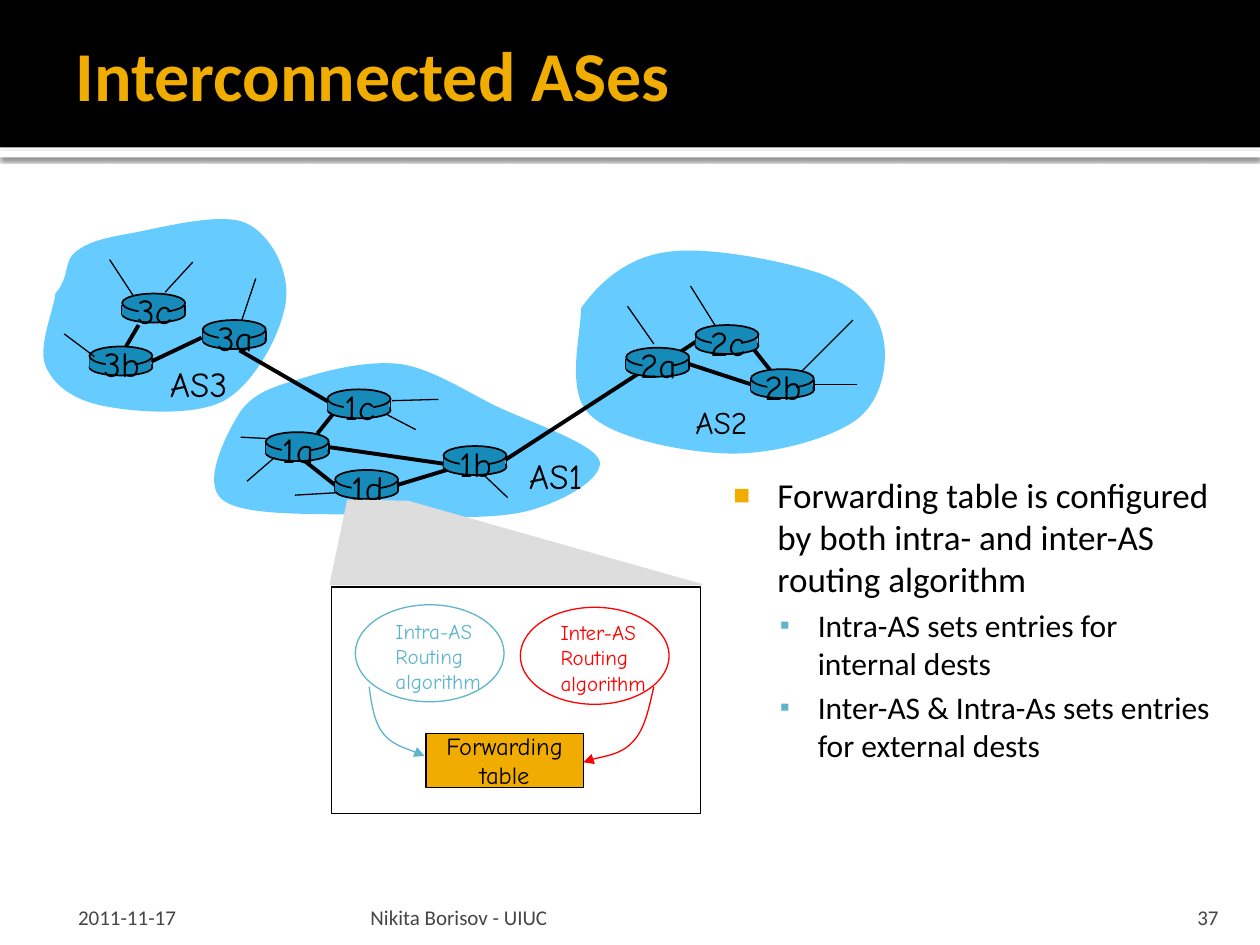
from lxml.etree import SubElement
from pptx import Presentation
from pptx.dml.color import RGBColor
from pptx.enum.shapes import MSO_CONNECTOR, MSO_SHAPE
from pptx.enum.text import MSO_ANCHOR, MSO_AUTO_SIZE, PP_ALIGN
from pptx.oxml.ns import qn
from pptx.util import Pt

PX = 9144  # 100 px to the inch
BLACK = RGBColor(0x00, 0x00, 0x00)
WHITE = RGBColor(0xFF, 0xFF, 0xFF)
GOLD = RGBColor(0xF0, 0xAD, 0x00)
TEAL = RGBColor(0x60, 0xB5, 0xCC)
RED = RGBColor(0xFF, 0x00, 0x00)
SKY = RGBColor(0x66, 0xCC, 0xFF)
ROUTER = RGBColor(0x16, 0x8B, 0xBA)
GRAY = RGBColor(0xDD, 0xDD, 0xDD)
FOOT = RGBColor(0x45, 0x45, 0x45)
SANS, COMIC = "Calibri", "Comic Neue"

TITLE = "Interconnected ASes"
BULLETS = [  # level, text
    (0, "Forwarding table is configured by both intra- and inter-AS routing algorithm"),
    (1, "Intra-AS sets entries for internal dests"),
    (1, "Inter-AS & Intra-As sets entries for external dests"),
]
LEVELS = [  # size, left margin, hang, space before, bullet, bullet colour, bullet %
    (20, 48, 35, 0, "■", GOLD, 80),
    (18, 80, 30, 3.6, "▪", TEAL, 90),
]
FOOTERS = [  # text, box, alignment, left and right inset
    ("2011-11-17", (50, 708, 233, 30), PP_ALIGN.LEFT, 12, 5),
    ("Nikita Borisov - UIUC", (289, 708, 602, 30), PP_ALIGN.LEFT, 5, 5),
    ("37", (897, 708, 80, 30), PP_ALIGN.RIGHT, 10, 10),
]
CLOUDS = [  # start point, then two control points and an end point per curve
    [(461, 245), (474, 226), (497, 204), (530, 200), (562, 195), (628, 208), (656, 219),
     (685, 231), (697, 249), (701, 268), (705, 287), (701, 317), (680, 333),
     (660, 348), (613, 361), (578, 360), (542, 359), (487, 348), (468, 329),
     (448, 310), (462, 262), (461, 245)],
    [(44, 233), (56, 219), (50, 208), (60, 200), (70, 192), (82, 189), (105, 185),
     (127, 181), (175, 168), (195, 177), (215, 186), (230, 215), (227, 239),
     (224, 263), (203, 304), (178, 318), (154, 331), (105, 327), (81, 322),
     (57, 317), (42, 305), (36, 290), (30, 275), (43, 245), (44, 233)],
    [(190, 328), (201, 311), (220, 306), (241, 300), (263, 293), (293, 286), (318, 289),
     (343, 293), (367, 309), (393, 322), (420, 335), (472, 352), (476, 366),
     (479, 380), (446, 399), (417, 406), (387, 413), (339, 410), (299, 409),
     (259, 407), (195, 411), (177, 397), (159, 384), (180, 344), (190, 328)],
]
AS_LABELS = [("AS3", (125, 283, 73, 43), 20), ("AS1", (410, 356, 73, 43), 20),
             ("AS2", (542, 315, 67, 40), 18)]
ROUTERS = {"3b": (71, 275), "1d": (266, 373), "3a": (161, 254), "1c": (260, 309),
           "2a": (497, 276), "1a": (211, 343), "2c": (552, 258), "2b": (596, 293),
           "1b": (352, 354), "3c": (97, 233)}
LINKS = [(547, 289, 596, 305), (598, 277, 613, 296), (536, 282, 554, 270),
         (315, 385, 358, 372), (242, 366, 266, 385), (262, 355, 352, 368),
         (252, 344, 264, 329), (120, 287, 160, 268), (190, 278, 261, 319),
         (401, 365, 506, 297), (110, 258, 100, 275)]
STUBS = [(51, 265, 75, 283), (153, 208, 131, 232), (87, 206, 106, 235),
         (203, 221, 192, 254), (645, 305, 680, 305), (636, 295, 677, 254),
         (568, 259, 548, 227), (519, 273, 498, 243), (218, 363, 196, 382),
         (211, 348, 191, 347), (268, 391, 234, 393), (311, 318, 348, 317),
         (384, 377, 403, 395), (307, 329, 330, 341)]
BEAM = [(262, 464), (276, 397), (324, 398), (557, 464), (262, 464)]
ALGORITHMS = [  # name, colour, ellipse corner, text corner, arrow curve
    ("Intra-AS", TEAL, (282, 480), (304, 486),
     [(293, 545), (295, 559), (297, 573), (304, 582), (311, 591), (331, 597), (337, 600)]),
    ("Inter-AS", RED, (413, 482), (435, 487),
     [(519, 545), (515, 562), (512, 579), (502, 589), (493, 599), (469, 602), (463, 605)]),
]


def px(values):
    return [v * PX for v in values]


def paint(sp, fill=None, line=None, width=0.75):
    sp.shadow.inherit = False
    if fill is None:
        sp.fill.background()
    else:
        sp.fill.solid()
        sp.fill.fore_color.rgb = fill
    if line is None:
        sp.line.fill.background()
    else:
        sp.line.color.rgb = line
        sp.line.width = Pt(width)
    return sp


def shape(shapes, kind, box, *style):
    return paint(shapes.add_shape(kind, *px(box)), *style)


def line(shapes, ends, width):
    c = shapes.add_connector(MSO_CONNECTOR.STRAIGHT, *px(ends))
    c.line.color.rgb = BLACK
    c.line.width = Pt(width)
    SubElement(c._element.spPr, qn("a:effectLst"))


def outline(shapes, points, closed, curved, *style):
    """Freeform through the points; curved takes them in threes as Bezier curves."""
    builder = shapes.build_freeform(*points[0], scale=PX)
    builder.add_line_segments(points[1:], close=closed)
    sp = builder.convert_to_shape()
    if curved:
        segments = sp._element.xpath(".//a:lnTo")
        for i in range(0, len(segments) - 2, 3):
            first = segments[i]
            curve = first.makeelement(qn("a:cubicBezTo"))
            first.addprevious(curve)
            for segment in segments[i:i + 3]:
                curve.append(segment[0])
                segment.getparent().remove(segment)
    return paint(sp, *style)


def write(tf, lines, size, color, font=COMIC, align=PP_ALIGN.LEFT, bold=False, **frame):
    for name, value in frame.items():
        setattr(tf, name, value)
    for i, text in enumerate(lines):
        p = tf.paragraphs[0] if i == 0 else tf.add_paragraph()
        p.alignment = align
        r = p.add_run()
        r.text = text
        r.font.color.rgb = color
        for name, value in {"size": Pt(size), "name": font, "bold": bold}.items():
            setattr(r.font, name, value)


def label(shapes, box, lines, size, color, **fmt):
    tf = shapes.add_textbox(*px(box)).text_frame
    write(tf, lines, size, color, **{"word_wrap": False, **fmt})


def router(shapes, name, x, y):
    g = shapes.add_group_shape().shapes
    shape(g, MSO_SHAPE.OVAL, (x, y + 10, 50, 13), ROUTER, BLACK, 1)
    for side in (x, x + 50):
        line(g, (side, y + 9, side, y + 17), 1)
    shape(g, MSO_SHAPE.RECTANGLE, (x, y + 9, 49, 8), ROUTER)
    shape(g, MSO_SHAPE.OVAL, (x, y, 50, 15), ROUTER, BLACK, 1)
    shape(g, MSO_SHAPE.RECTANGLE, (x + 13, y + 2, 23, 19), ROUTER)
    label(g, (x, y - 8, 51, 43), [name], 20, BLACK, align=PP_ALIGN.CENTER)


def bullet(p, level):
    size, left, hang, before, char, color, percent = LEVELS[level]
    p.level = level
    p.space_before = Pt(before)
    p.runs[0].font.size = Pt(size)
    pPr = p._p.get_or_add_pPr()
    pPr.set("marL", str(left * PX))
    pPr.set("indent", str(-hang * PX))
    SubElement(SubElement(pPr, qn("a:buClr")), qn("a:srgbClr"), val=str(color))
    SubElement(pPr, qn("a:buSzPct"), val=str(percent * 1000))
    SubElement(pPr, qn("a:buChar"), char=char)


def place(ph, box):
    """Put a placeholder at the box, in front of everything drawn so far."""
    ph.left, ph.top, ph.width, ph.height = px(box)
    ph._element.getparent().append(ph._element)
    return ph.text_frame


prs = Presentation()
prs.slide_width, prs.slide_height = px((1000, 750))
s = prs.slides.add_slide(prs.slide_layouts[1])
shapes = s.shapes

rule = shape(shapes, MSO_SHAPE.RECTANGLE, (0, 120, 1000, 5), WHITE)
shadow = SubElement(rule._element.spPr.find(qn("a:effectLst")), qn("a:outerShdw"),
                    blurRad=str(Pt(2.5)), dist=str(Pt(0.8)), dir="5400000")
SubElement(SubElement(shadow, qn("a:srgbClr"), val=str(BLACK)), qn("a:alpha"), val="60000")
shape(shapes, MSO_SHAPE.RECTANGLE, (0, 0, 1000, 117), BLACK)

for cloud in CLOUDS:
    outline(shapes, cloud, True, True, SKY)
for ends in LINKS:
    line(shapes, ends, 2.25)
for name, (x, y) in ROUTERS.items():
    router(shapes, name, x, y)
for text, box, size in AS_LABELS:
    label(shapes, box, [text], size, BLACK)
for ends in STUBS:
    line(shapes, ends, 0.75)

outline(shapes, BEAM, True, False, GRAY, GRAY)
shape(shapes, MSO_SHAPE.RECTANGLE, (263, 466, 293, 180), None, BLACK)
for name, color, corner, text_corner, curve in ALGORITHMS:
    shape(shapes, MSO_SHAPE.OVAL, (*corner, 118, 77), None, color)
    label(shapes, (*text_corner, 89, 70), [name, "Routing", "algorithm"], 12, color)
    arrow = outline(shapes, curve, False, True, None, color)
    SubElement(arrow._element.xpath(".//a:ln")[0], qn("a:tailEnd"), type="triangle")
table = shape(shapes, MSO_SHAPE.RECTANGLE, (338, 582, 125, 43), GOLD, BLACK)
write(table.text_frame, ["Forwarding", "table"], 14, BLACK, align=PP_ALIGN.CENTER,
      word_wrap=False, vertical_anchor=MSO_ANCHOR.MIDDLE)

write(place(shapes.title, (50, 8, 900, 100)), [TITLE], 40, GOLD, SANS, bold=True,
      vertical_anchor=MSO_ANCHOR.MIDDLE, margin_right=5 * PX, auto_size=MSO_AUTO_SIZE.NONE)
body = place(s.placeholders[1], (559, 366, 417, 372))
write(body, [text for _, text in BULLETS], 20, BLACK, SANS,
      margin_top=10 * PX, auto_size=MSO_AUTO_SIZE.NONE)
for p, (level, _) in zip(body.paragraphs, BULLETS):
    bullet(p, level)
for text, box, align, left, right in FOOTERS:
    label(shapes, box, [text], 12, FOOT, font=SANS, align=align, word_wrap=True,
          vertical_anchor=MSO_ANCHOR.BOTTOM, margin_left=left * PX,
          margin_right=right * PX, margin_bottom=0)

prs.save("out.pptx")
